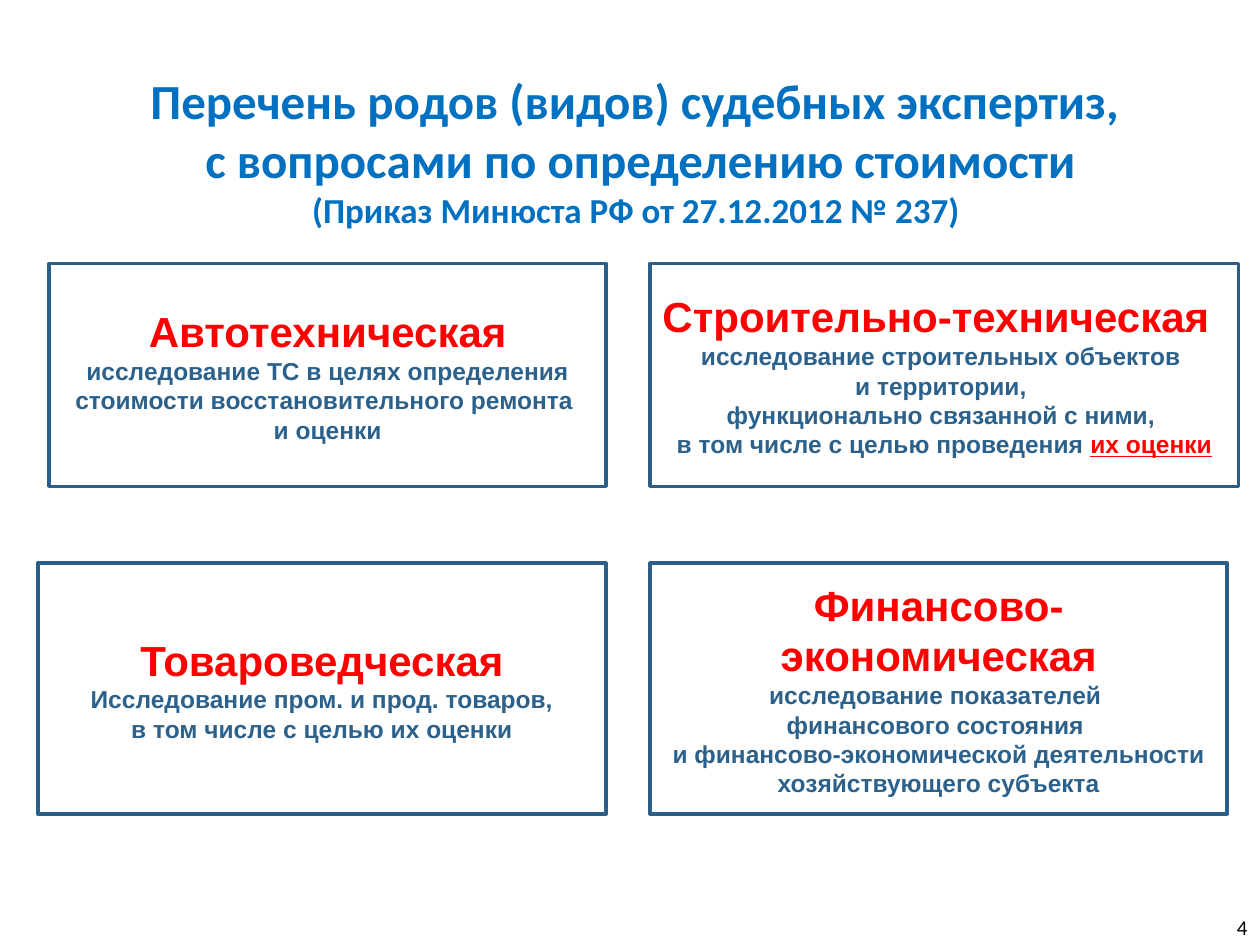
from pptx import Presentation
from pptx import util as u
from pptx.dml import color
from pptx.enum import shapes, text

RED, BLUE, STEEL, BORDER = "FF0000", "0070C0", "2B618B", "2B5F8A"
CENTER, LEFT, RIGHT = text.PP_ALIGN.CENTER, text.PP_ALIGN.LEFT, text.PP_ALIGN.RIGHT


def rgb(value):
    return color.RGBColor.from_string(value)


class PageBuilder:
    """Holds the page and its text style."""

    def __init__(self, page):
        self.page = page

    def style(self, span, size, fill, font="Arial", bold=True):
        span.font.size = u.Pt(size)
        span.font.name = font
        span.font.bold = bold
        span.font.color.rgb = rgb(fill)

    def fill_text(self, frame, lines, sizes, fills, font="Arial", bold=True,
                  align=CENTER):
        frame.word_wrap = True
        frame.text = "\n".join(lines)
        for para, size, fill in zip(frame.paragraphs, sizes, fills):
            para.alignment = align
            for span in para.runs:
                self.style(span, size, fill, font, bold)

    def label(self, place, lines, sizes, fill, bold=True, align=CENTER,
              anchor=text.MSO_ANCHOR.TOP):
        box = self.page.shapes.add_textbox(*map(u.Inches, place))
        box.text_frame.vertical_anchor = anchor
        self.fill_text(box.text_frame, lines, sizes, [fill] * len(lines),
                       "Calibri", bold, align)
        return box

    def card(self, place, heading, details):
        box = self.page.shapes.add_shape(shapes.MSO_SHAPE.RECTANGLE,
                                         *map(u.Inches, place))
        box.shadow.inherit = False
        box.fill.background()
        box.line.color.rgb = rgb(BORDER)
        box.line.width = u.Pt(2)
        box.text_frame.vertical_anchor = text.MSO_ANCHOR.MIDDLE
        count = len(details)
        self.fill_text(box.text_frame, [heading, *details],
                       [24] + [14] * count, [RED] + [STEEL] * count)
        return box


def main():
    deck = Presentation()
    deck.slide_width, deck.slide_height = u.Inches(10), u.Inches(7.5)
    builder = PageBuilder(deck.slides.add_slide(deck.slide_layouts[6]))

    # Title
    builder.label((0.47, 0.51, 9.22, 1.38),
                  ["Перечень родов (видов) судебных экспертиз, ",
                   "с вопросами по определению стоимости",
                   "(Приказ Минюста РФ от 27.12.2012 № 237) "],
                  [28, 28, 20], BLUE)

    # Upper row of examination types
    top, height, right_column = 2.09, 1.77, 5.16
    builder.card((0.39, top, 4.42, height), "Автотехническая",
                 ["исследование ТС в целях определения стоимости "
                  "восстановительного ремонта ", "и оценки"])
    building = builder.card((right_column, top, 4.67, height),
                            "Строительно-техническая",
                            ["исследование строительных объектов ",
                             "и территории, ",
                             "функционально связанной с ними, ",
                             "в том числе с целью проведения "])
    paras = building.text_frame.paragraphs
    paras[0].alignment = LEFT
    valuation = paras[-1].add_run()
    valuation.text = "их оценки"
    builder.style(valuation, 14, RED)
    valuation.font.underline = True

    # Lower row of examination types
    top, height = 4.47, 1.99
    builder.card((0.3, top, 4.51, height), "Товароведческая",
                 ["Исследование пром. и прод. товаров,",
                  "в том числе с целью их оценки"])
    builder.card((right_column, top, 4.58, height), "Финансово-экономическая",
                 ["исследование показателей ", "финансового состояния ",
                  "и финансово-экономической деятельности хозяйствующего субъекта"])

    # Page number
    number = builder.label((9.42, 7.22, 0.58, 0.28), ["4"], [12], "000000",
                           bold=False, align=RIGHT, anchor=text.MSO_ANCHOR.MIDDLE)
    number.text_frame.margin_top = number.text_frame.margin_bottom = u.Inches(0.1)

    deck.save("out.pptx")


if __name__ == "__main__":
    main()
